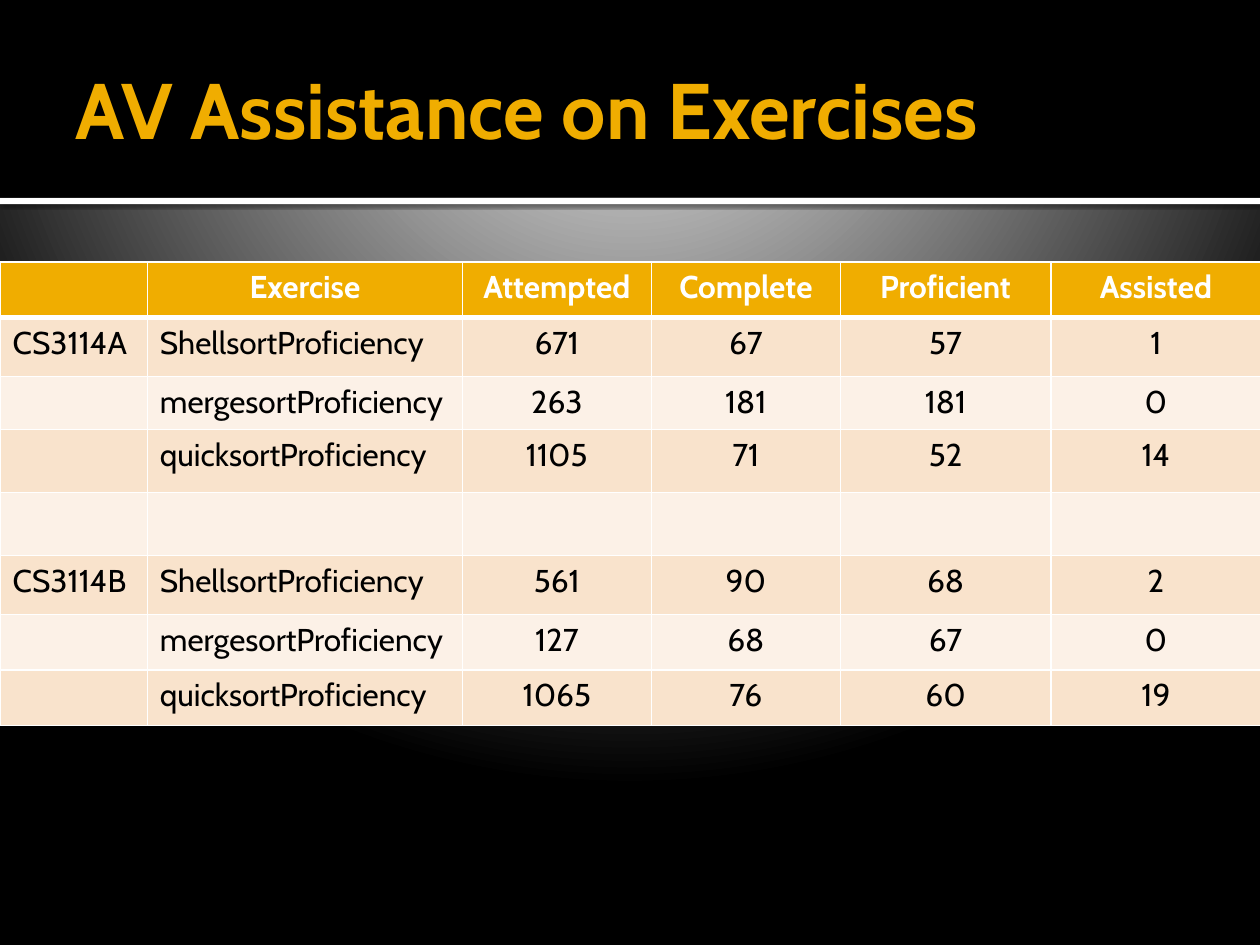
from pptx import Presentation
from pptx.dml.color import RGBColor
from pptx.enum import shapes, text
from pptx.oxml import parse_xml
from pptx.util import Inches, Pt

FONT = "Cabin"
NS = ('xmlns:a="http://schemas.openxmlformats.org/drawingml/2006/main" '
      'xmlns:p="http://schemas.openxmlformats.org/presentationml/2006/main"')
COLORS = {"gold": "F0AD00", "white": "FFFFFF", "black": "000000",
          "odd": "F9E3CC", "even": "FCF1E7"}
GLOW = [(0, "C0C0C0"), (12, "C0C0C0"), (20, "BEBEBE"), (100, "000000")]

TITLE = "AV Assistance on Exercises"
HEAD = ("", "Exercise", "Attempted", "Complete", "Proficient", "Assisted")
KINDS = ("ShellsortProficiency", "mergesortProficiency", "quicksortProficiency")
COUNTS = {
    "CS3114A": [(671, 67, 57, 1), (263, 181, 181, 0), (1105, 71, 52, 14)],
    "CS3114B": [(561, 90, 68, 2), (127, 68, 67, 0), (1065, 76, 60, 19)],
}
WIDTHS = (1.17, 2.5, 1.5, 1.5, 1.67, 1.67)
HEIGHTS = (0.44, 0.47, 0.42, 0.5, 0.5, 0.47, 0.44, 0.44)


def rgb(name):
    return RGBColor.from_string(COLORS[name])


def style(para, size, color, bold):
    font = para.font
    font.name, font.size, font.bold = FONT, Pt(size), bold
    font.color.rgb = rgb(color)


def glow(slide):
    """Give the slide a round gradient that shines from the top."""
    stops = "".join(f'<a:gs pos="{pos * 1000}"><a:srgbClr val="{color}"/></a:gs>'
                    for pos, color in GLOW)
    back = parse_xml(
        f'<p:bg {NS}><p:bgPr><a:gradFill rotWithShape="1"><a:gsLst>{stops}</a:gsLst>'
        '<a:path path="circle"><a:fillToRect l="10000" t="-25000" r="10000" '
        'b="125000"/></a:path></a:gradFill><a:effectLst/></p:bgPr></p:bg>')
    slide.element.cSld.insert(0, back)


def band(slide, top, height, color):
    rect = slide.shapes.add_shape(shapes.MSO_SHAPE.RECTANGLE, 0, Inches(top),
                                  Inches(10), Inches(height))
    rect.shadow.inherit = False
    rect.fill.solid()
    rect.fill.fore_color.rgb = rgb(color)
    rect.line.fill.background()
    return rect


def shade(rect):
    """Drop a soft shadow below the shape."""
    rect.element.spPr[-1].append(parse_xml(
        f'<a:outerShdw {NS} blurRad="31750" dist="10160" dir="5400000">'
        '<a:srgbClr val="000000"><a:alpha val="60000"/></a:srgbClr></a:outerShdw>'))


def border(cell, widths):
    """Draw white cell borders; widths maps sides L, R, T, B to points."""
    props = cell._tc.get_or_add_tcPr()
    for at, (side, width) in enumerate(widths.items()):
        props.insert(at, parse_xml(
            f'<a:ln{side} {NS} w="{Pt(width)}"><a:solidFill>'
            f'<a:srgbClr val="{COLORS["white"]}"/></a:solidFill></a:ln{side}>'))


def table_rows():
    rows = [HEAD]
    for course, counts in COUNTS.items():
        if len(rows) > 1:
            rows.append(("",) * len(HEAD))
        for i, (kind, nums) in enumerate(zip(KINDS, counts)):
            rows.append(("" if i else course, kind, *nums))
    return rows


def add_grid(slide):
    rows = table_rows()
    grid = slide.shapes.add_table(len(rows), len(HEAD), 0, Inches(2.08),
                                  Inches(10), Inches(sum(HEIGHTS))).table
    for col, width in zip(grid.columns, WIDTHS):
        col.width = Inches(width)
    for r, (row, height) in enumerate(zip(rows, HEIGHTS)):
        grid.rows[r].height = Inches(height)
        fill = "gold" if r == 0 else "odd" if r % 2 else "even"
        for c, value in enumerate(row):
            cell = grid.cell(r, c)
            cell.fill.solid()
            cell.fill.fore_color.rgb = rgb(fill)
            border(cell, {"L": 1, "R": 1, "T": 3 if r == 1 else 1,
                          "B": 3 if r == 0 else 1})
            cell.text = str(value)
            para = cell.text_frame.paragraphs[0]
            style(para, 18, "black" if r else "white", r == 0)
            if r == 0 or c > 1:
                para.alignment = text.PP_ALIGN.CENTER


def add_title(slide):
    box = slide.shapes.add_textbox(Inches(0.5), Inches(0.17), Inches(9), Inches(1.37))
    frame = box.text_frame
    frame.word_wrap = True
    frame.vertical_anchor = text.MSO_ANCHOR.MIDDLE
    frame.margin_right = Inches(0.05)
    frame.text = TITLE
    style(frame.paragraphs[0], 45, "gold", True)


def main():
    deck = Presentation()
    deck.slide_width, deck.slide_height = Inches(10), Inches(7.5)
    slide = deck.slides.add_slide(deck.slide_layouts[6])
    glow(slide)
    shade(band(slide, 1.57, 0.05, "white"))
    band(slide, 0, 1.57, "black")
    add_title(slide)
    add_grid(slide)
    deck.save("out.pptx")


if __name__ == "__main__":
    main()
